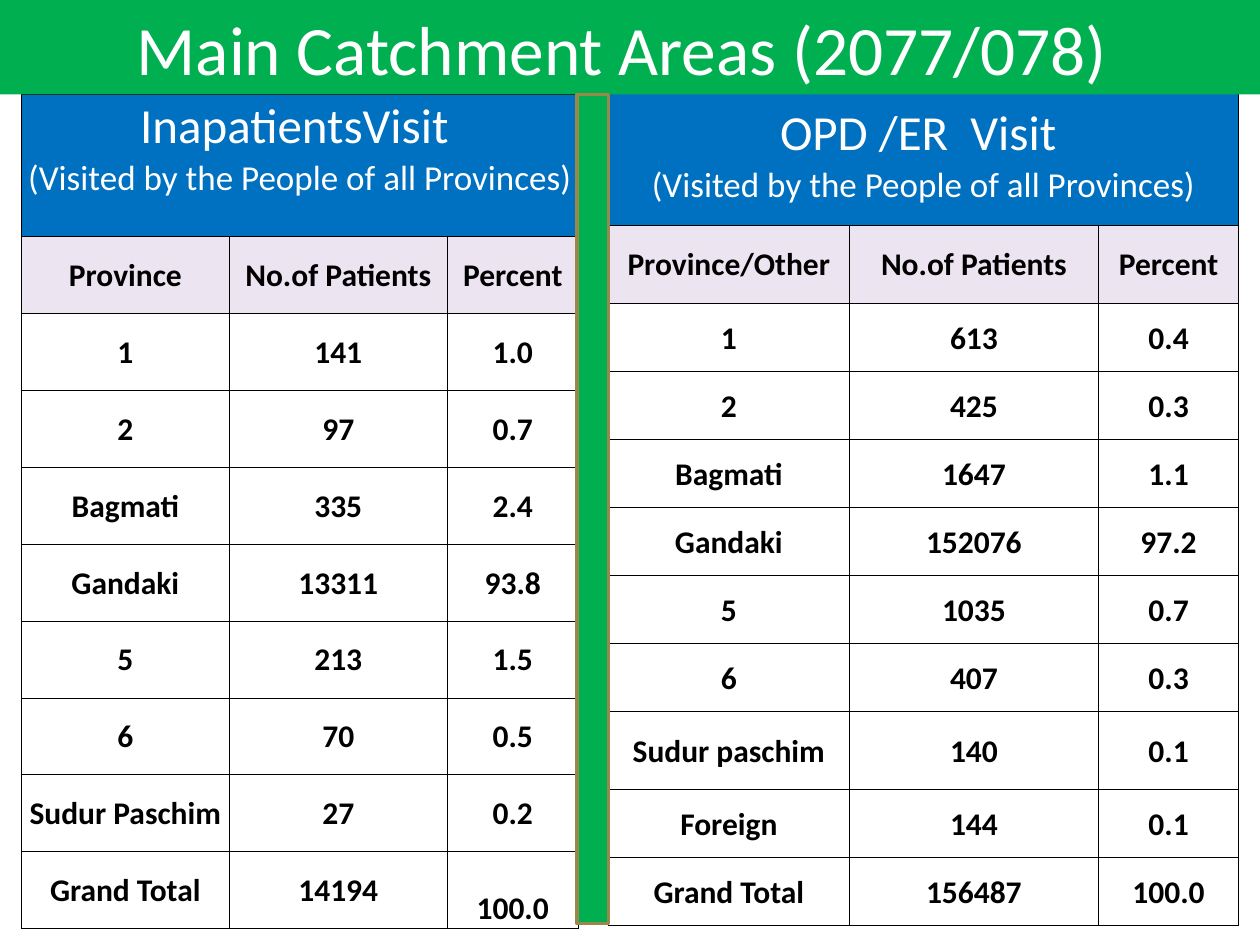
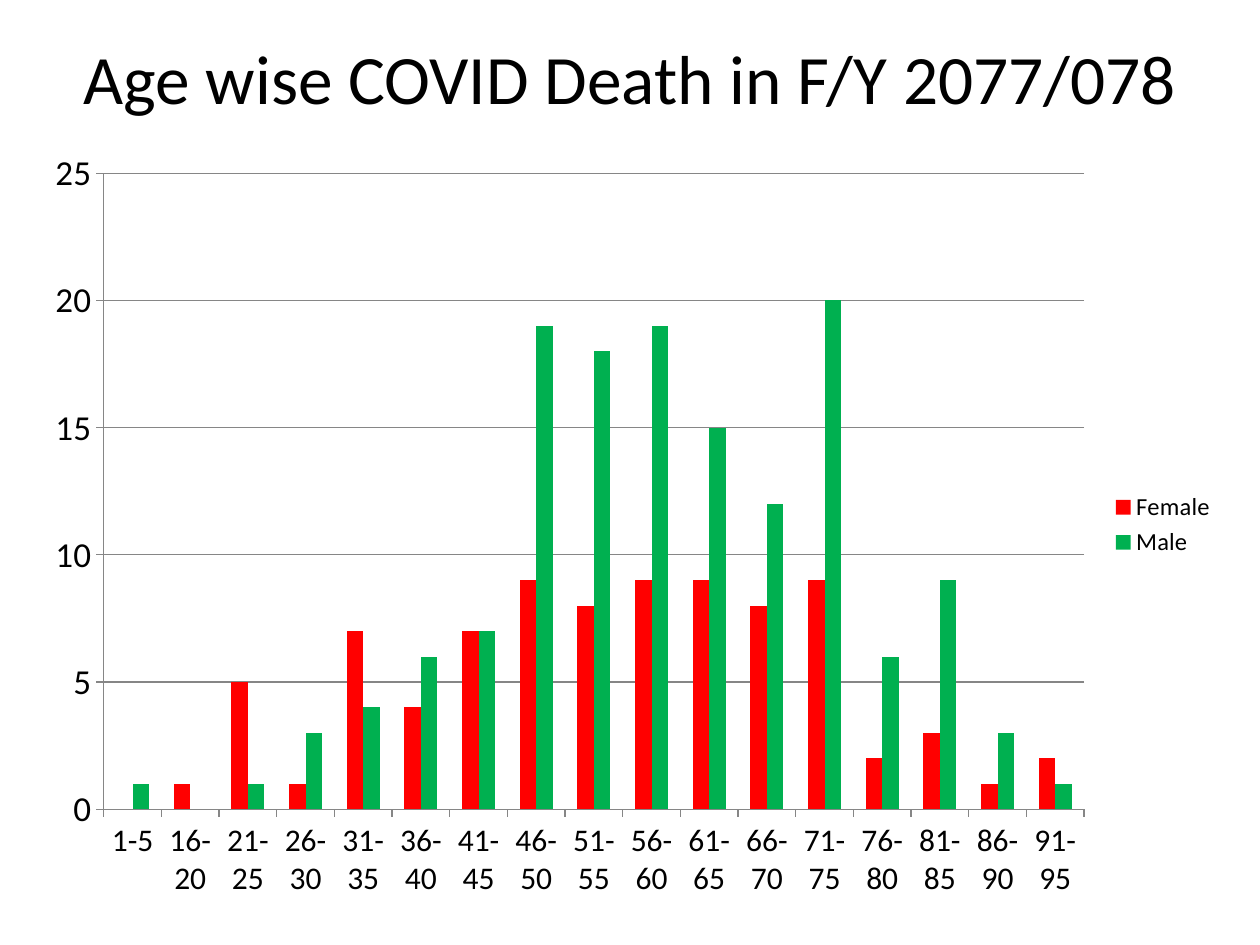
from lxml import etree
from pptx import Presentation
from pptx.chart.data import CategoryChartData
from pptx.dml.color import RGBColor
from pptx.enum.chart import XL_CHART_TYPE, XL_LEGEND_POSITION, XL_TICK_MARK
from pptx.enum.shapes import MSO_SHAPE
from pptx.enum.text import MSO_ANCHOR, PP_ALIGN
from pptx.oxml import parse_xml
from pptx.oxml.ns import nsdecls
from pptx.util import Inches, Pt

FONT = "Calibri"
GREEN = RGBColor(0x00, 0xB0, 0x50)
BLUE = RGBColor(0x00, 0x70, 0xC0)
LILAC = RGBColor(0xED, 0xE4, 0xF1)
OLIVE = RGBColor(0x98, 0x89, 0x4B)
RED = RGBColor(0xFF, 0x00, 0x00)
GREY = RGBColor(0x86, 0x86, 0x86)
WHITE = RGBColor(0xFF, 0xFF, 0xFF)
BLACK = RGBColor(0x00, 0x00, 0x00)
TITLE = 39.6


def write(frame, text, sizes=(18,), color=BLACK, bold=False):
    """Fill a text frame with centred lines, one size for each line."""
    frame.word_wrap = True
    for i, (line, size) in enumerate(zip(text.split("\n"), sizes)):
        para = frame.paragraphs[0] if i == 0 else frame.add_paragraph()
        para.alignment = PP_ALIGN.CENTER
        run = para.add_run()
        run.text = line
        run.font.name, run.font.size = FONT, Pt(size)
        run.font.bold, run.font.color.rgb = bold, color


def dress(cell, fill=None):
    """Set the fill, margins and thin black borders of a table cell."""
    cell.vertical_anchor = MSO_ANCHOR.MIDDLE
    cell.margin_left = cell.margin_right = cell.margin_top = Inches(0.01)
    cell.margin_bottom = 0
    if fill is None:
        cell.fill.background()
    else:
        cell.fill.solid()
        cell.fill.fore_color.rgb = fill
    props = cell._tc.get_or_add_tcPr()
    for i, side in enumerate("LRTB"):
        props.insert(i, parse_xml(
            f'<a:ln{side} {nsdecls("a")} w="{Pt(0.5)}"><a:solidFill>'
            f'<a:srgbClr val="{BLACK}"/></a:solidFill></a:ln{side}>'))


deck = Presentation()
deck.slide_width, deck.slide_height = Inches(10), Inches(7.5)
blank = deck.slide_layouts[6]

# Slide 1: patients by province
slide = deck.slides.add_slide(blank)
NOTE = "(Visited by the People of all Provinces)"
visits = [
    dict(left=0.17, top=0.75, cols=[1.65, 1.73, 1.04],
         rows=[1.13] + [0.61] * 9,
         head="InapatientsVisit \n" + NOTE,
         data=[("Province", "No.of Patients", "Percent"),
               ("1", "141", "1.0"), ("2", "97", "0.7"),
               ("Bagmati", "335", "2.4"), ("Gandaki", "13311", "93.8"),
               ("5", "213", "1.5"), ("6", "70", "0.5"),
               ("Sudur Paschim", "27", "0.2"),
               ("Grand Total", "14194", "100.0")]),
    dict(left=4.83, top=0.67, cols=[1.91, 1.98, 1.11],
         rows=[1.12, 0.62] + [0.54] * 6 + [0.62] + [0.54] * 2,
         head="OPD /ER  Visit \n" + NOTE,
         data=[("Province/Other", "No.of Patients", "Percent"),
               ("1", "613", "0.4"), ("2", "425", "0.3"),
               ("Bagmati", "1647", "1.1"), ("Gandaki", "152076", "97.2"),
               ("5", "1035", "0.7"), ("6", "407", "0.3"),
               ("Sudur paschim", "140", "0.1"), ("Foreign", "144", "0.1"),
               ("Grand Total", "156487", "100.0")]),
]
visits[0]["rows"] = visits[0]["rows"][:len(visits[0]["data"]) + 1]
visits[1]["rows"] = [1.12, 0.62] + [0.54] * 6 + [0.62] + [0.54] * 2
tables = []
for visit in visits:
    rows, cols, data = visit["rows"], visit["cols"], visit["data"]
    table = slide.shapes.add_table(
        len(data) + 1, len(cols), Inches(visit["left"]), Inches(visit["top"]),
        Inches(sum(cols)), Inches(sum(rows))).table
    table.first_row = table.horz_banding = False
    for col, width in zip(table.columns, cols):
        col.width = Inches(width)
    for row, height in zip(table.rows, rows):
        row.height = Inches(height)
    for cell in table.rows[0].cells:
        dress(cell, BLUE)
    head = table.cell(0, 0)
    head.merge(table.cell(0, len(cols) - 1))
    write(head.text_frame, visit["head"], sizes=(28, 20), color=WHITE)
    for r, line in enumerate(data, 1):
        for c, text in enumerate(line):
            cell = table.cell(r, c)
            dress(cell, LILAC if r == 1 else None)
            write(cell.text_frame, text, bold=True)
    tables.append(table)

# The inpatient heading sits high, its last total sits low
inner = tables[0]
inner.cell(0, 0).margin_bottom = Inches(0.28)
inner.cell(len(inner.rows) - 1, 2).vertical_anchor = MSO_ANCHOR.BOTTOM

# Title band and the divider between the tables
for x, y, w, h in [(0, 0, 10, 0.75), (4.58, 0.75, 0.25, 6.58)]:
    band = slide.shapes.add_shape(
        MSO_SHAPE.RECTANGLE, Inches(x), Inches(y), Inches(w), Inches(h))
    band.shadow.inherit = False
    band.fill.solid()
    band.fill.fore_color.rgb = GREEN
    if y == 0:
        band.line.fill.background()
        band.text_frame.vertical_anchor = MSO_ANCHOR.MIDDLE
        write(band.text_frame, "Main Catchment Areas (2077/078) ",
              sizes=(TITLE,), color=WHITE)
    else:
        band.line.color.rgb, band.line.width = OLIVE, Pt(2)

# Slide 2: deaths by age
slide = deck.slides.add_slide(blank)
box = slide.shapes.add_textbox(
    Inches(0.25), Inches(0.3), Inches(9.5), Inches(0.62))
box.text_frame.vertical_anchor = MSO_ANCHOR.MIDDLE
write(box.text_frame, "Age wise COVID Death in F/Y 2077/078", sizes=(TITLE,))

ages = CategoryChartData()
ages.categories = ["1-5"] + [f"{a}-{a + 4}" for a in range(16, 92, 5)]
ages.add_series("Female", [None, 1, 5, 1, 7, 4, 7, 9, 8, 9, 9, 8, 9, 2, 3, 1, 2])
ages.add_series("Male", [1, None, 1, 3, 4, 6, 7, 19, 18, 19, 15, 12, 20, 6, 9, 3, 1])
chart = slide.shapes.add_chart(
    XL_CHART_TYPE.COLUMN_CLUSTERED, Inches(0.25), Inches(1.08),
    Inches(9.5), Inches(6.17), ages).chart
chart.has_title = False
chart.font.name, chart.font.size = FONT, Pt(10)
chart.font.color.rgb = BLACK

plot = chart.plots[0]
plot.vary_by_categories = False
plot.gap_width, plot.overlap = 150, 0
for series, color in zip(plot.series, (RED, GREEN)):
    series.format.fill.solid()
    series.format.fill.fore_color.rgb = color

# Axes, grid and legend
for axis, size in [(chart.category_axis, 18), (chart.value_axis, 20)]:
    axis.major_tick_mark = XL_TICK_MARK.OUTSIDE
    axis.format.line.color.rgb = GREY
    axis.tick_labels.font.size = Pt(size)
scale = chart.value_axis
scale.minimum_scale, scale.maximum_scale, scale.major_unit = 0, 25, 5
scale.has_major_gridlines = True
scale.major_gridlines.format.line.color.rgb = GREY
chart.has_legend = True
chart.legend.position = XL_LEGEND_POSITION.RIGHT
chart.legend.include_in_layout = False
chart.legend.font.size = Pt(14)

deck.save("out.pptx")
